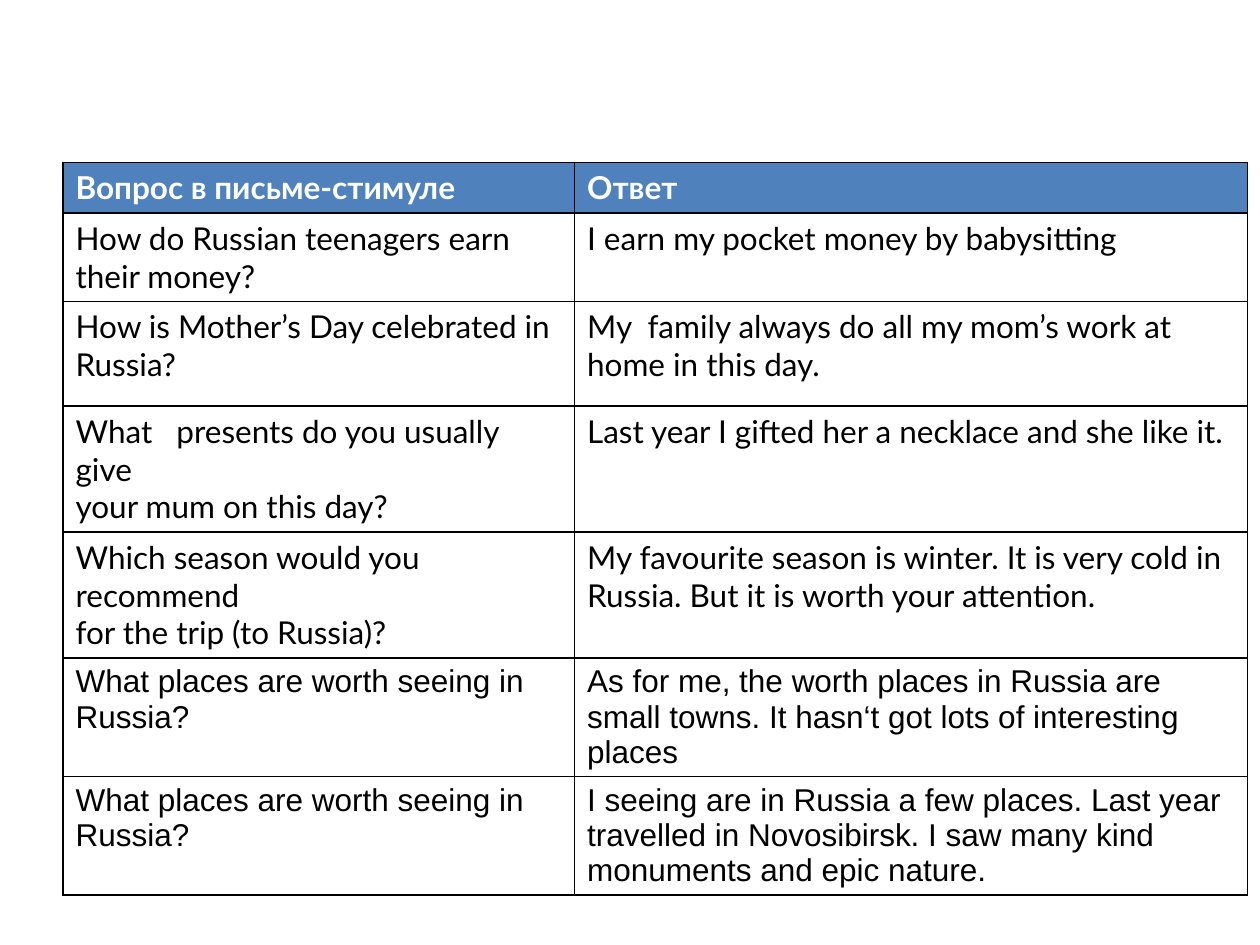
from lxml.etree import SubElement as Sub
from pptx import Presentation
from pptx.dml.color import RGBColor
from pptx.oxml.ns import qn
from pptx.util import Inches, Pt

COLS = [4.06, 5.34]
ROWS = [
    (0.36, "Lato", ["Вопрос в письме-стимуле"], ["Ответ"]),
    (0.63, "Lato", ["How do Russian teenagers earn their money?"],
     ["I earn my pocket money by babysitting"]),
    (0.83, "Lato", ["How is Mother’s Day celebrated in", "Russia?"],
     ["My  family always do all my mom’s work at home in this day."]),
    (0.83, "Lato", ["What   presents do you usually give", "your mum on this day?"],
     ["Last year I gifted her a necklace and she like it."]),
    (0.9, "Lato", ["Which season would you recommend", "for the trip (to Russia)?"],
     ["My favourite season is winter. It is very cold in Russia. "
      "But it is worth your attention."]),
    (0.93, "Arial", ["What places are worth seeing in", "Russia?"],
     ["As for me, the worth places in Russia are",
      "small towns. It hasn‘t got lots of interesting", "places"]),
    (0.93, "Arial", ["What places are worth seeing in", "Russia?"],
     ["I seeing are in Russia a few places. Last year travelled in Novosibirsk. "
      "I saw many kind", "monuments and epic nature."]),
]


def color(code):
    return RGBColor.from_string(code)


def add_edges(cell, code, width):
    props = cell._tc.get_or_add_tcPr()
    for side in ("a:lnL", "a:lnR", "a:lnT", "a:lnB"):
        line = Sub(props, qn(side), w=str(Pt(width)))
        Sub(Sub(line, qn("a:solidFill")), qn("a:srgbClr"), val=code)


def fill_cell(cell, lines, font, head):
    add_edges(cell, "000000", 1)
    cell.fill.solid()
    cell.fill.fore_color.rgb = color("4F81BD" if head else "FFFFFF")
    frame = cell.text_frame
    for i, line in enumerate(lines):
        para = frame.add_paragraph() if i else frame.paragraphs[0]
        run = para.add_run()
        run.text = line
        run.font.name = font
        run.font.size = Pt(18)
        run.font.bold = head
        run.font.color.rgb = color("FFFFFF" if head else "000000")


def add_answers(slide, left, top, width, height):
    """Place the table of questions and answers in the given box."""
    table = slide.shapes.add_table(
        len(ROWS), len(COLS), Inches(left), Inches(top),
        Inches(width), Inches(height)).table
    for col, size in zip(table.columns, COLS):
        col.width = Inches(width * size / sum(COLS))
    for i, (size, font, *texts) in enumerate(ROWS):
        table.rows[i].height = Inches(size)
        for cell, lines in zip(table.rows[i].cells, texts):
            fill_cell(cell, lines, font, head=i == 0)


def main():
    deck = Presentation()
    deck.slide_width, deck.slide_height = Inches(10), Inches(7.5)
    slide = deck.slides.add_slide(deck.slide_layouts[6])
    add_answers(slide, 0.5, 1.29, sum(COLS), sum(row[0] for row in ROWS))
    deck.save("out.pptx")


if __name__ == "__main__":
    main()
